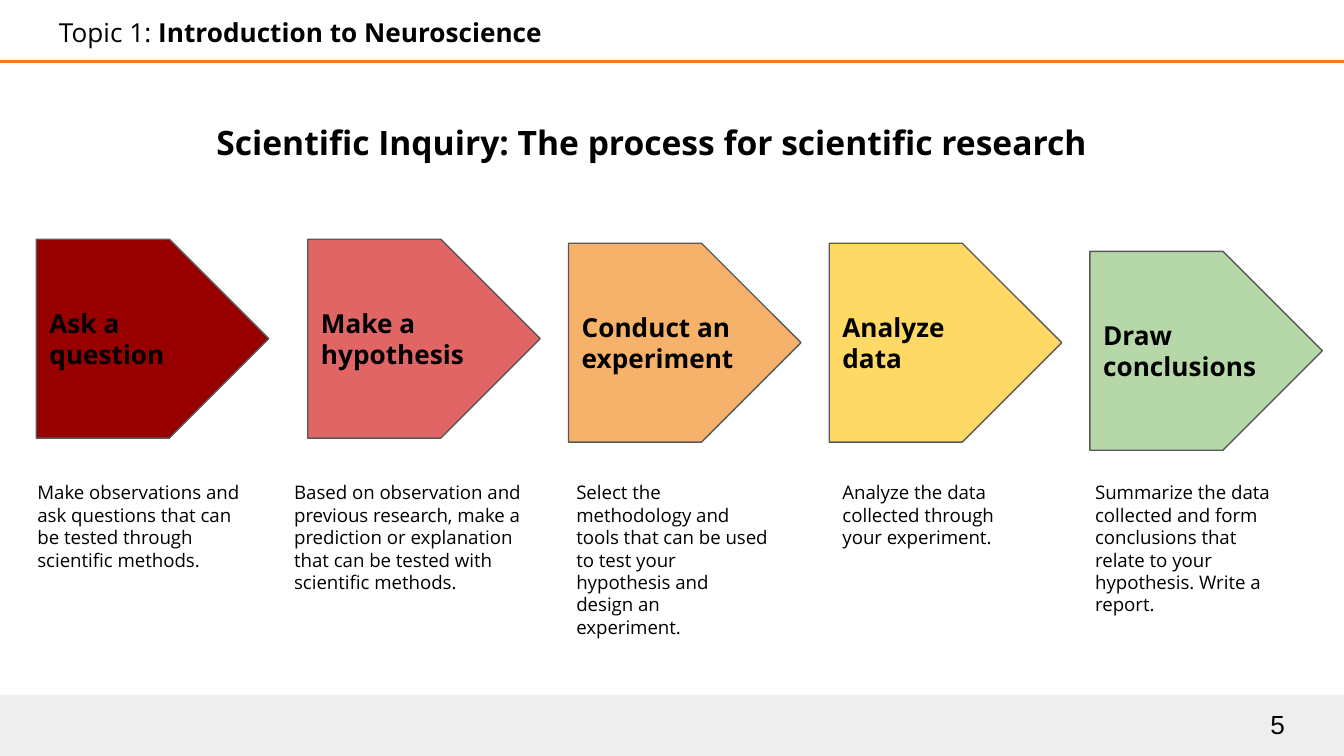
from pptx import Presentation
from pptx.dml.color import RGBColor
from pptx.enum.shapes import MSO_CONNECTOR, MSO_SHAPE
from pptx.enum.text import MSO_ANCHOR, MSO_AUTO_SIZE, PP_ALIGN
from pptx.oxml.ns import qn
from pptx.util import Inches, Pt
from lxml import etree

LEFT, CENTER, RIGHT = PP_ALIGN.LEFT, PP_ALIGN.CENTER, PP_ALIGN.RIGHT
TOP, MIDDLE = MSO_ANCHOR.TOP, MSO_ANCHOR.MIDDLE
RECTANGLE, PENTAGON = MSO_SHAPE.RECTANGLE, MSO_SHAPE.PENTAGON
STRAIGHT = MSO_CONNECTOR.STRAIGHT
NO_AUTOFIT = MSO_AUTO_SIZE.NONE

BLACK = RGBColor(0x00, 0x00, 0x00)
ORANGE = RGBColor(0xF4, 0x77, 0x21)
FOOTER_GRAY = RGBColor(0xEE, 0xEE, 0xEE)
OUTLINE_GRAY = RGBColor(0x59, 0x59, 0x59)
DARK_RED = RGBColor(0x98, 0x00, 0x00)
RED = RGBColor(0xE0, 0x66, 0x66)
PEACH = RGBColor(0xF6, 0xB2, 0x6B)
YELLOW = RGBColor(0xFF, 0xD9, 0x66)
GREEN = RGBColor(0xB6, 0xD7, 0xA8)

SLIDE_W = 10
SLIDE_H = SLIDE_W * 9 / 16
FOOTER_TOP = 5.17
ARROW_W, ARROW_H = 1.73, 1.48
NOTE_TOP = 3.48

# label, fill, arrow left and top, note, note left, width and height
STEPS = [
    ("Ask a question", DARK_RED, 0.27, 1.78,
     "Make observations and ask questions that can be tested through "
     "scientific methods.", 0.18, 1.78, 0.93),
    ("Make a hypothesis", RED, 2.29, 1.78,
     "Based on observation and previous research, make a prediction or "
     "explanation that can be tested with scientific methods.",
     2.09, 2.01, 0.93),
    ("Conduct an experiment", PEACH, 4.23, 1.81,
     "Select the methodology and tools that can be used to test your "
     "hypothesis and design an experiment.", 4.19, 1.63, 1.16),
    ("Analyze data", YELLOW, 6.17, 1.81,
     "Analyze the data collected through your experiment.",
     6.17, 1.58, 0.93),
    ("Draw conclusions", GREEN, 8.11, 1.87,
     "Summarize the data collected and form conclusions that relate to your "
     "hypothesis. Write a report.", 8.05, 1.58, 1.21),
]


def write_text(s, *texts, size=14, font="Open Sans", bold=False, align=LEFT,
               anchor=TOP):
    """Write one paragraph; a (text, bold) pair overrides the weight."""
    tf = s.text_frame
    tf.word_wrap = True
    tf.auto_size = NO_AUTOFIT
    tf.vertical_anchor = anchor
    tf.margin_left = tf.margin_right = Inches(0.1)
    tf.margin_top = tf.margin_bottom = Inches(0.1)
    p = tf.paragraphs[0]
    p.alignment = align
    for item in texts:
        text, weight = (item, bold) if isinstance(item, str) else item
        r = p.add_run()
        r.text = text
        r.font.name = font
        r.font.size = Pt(size)
        r.font.bold = weight
        r.font.color.rgb = BLACK


def add_text(slide, x, y, w, h, *texts, **fmt):
    s = slide.shapes.add_textbox(Inches(x), Inches(y), Inches(w), Inches(h))
    write_text(s, *texts, **fmt)


def add_block(slide, kind, x, y, w, h, fill, outline=None):
    s = slide.shapes.add_shape(kind, Inches(x), Inches(y), Inches(w), Inches(h))
    s.shadow.inherit = False
    s.fill.solid()
    s.fill.fore_color.rgb = fill
    if outline is None:
        s.line.fill.background()
    else:
        s.line.color.rgb = outline
        s.line.width = Pt(0.75)
    return s


def add_rule(slide, y):
    line = slide.shapes.add_connector(STRAIGHT, 0, Inches(y),
                                      Inches(SLIDE_W), Inches(y))
    line.line.color.rgb = ORANGE
    line.line.width = Pt(1.5)
    etree.SubElement(line._element.spPr, qn("a:effectLst"))


def set_title(slide, x, y, w, h, text):
    s = slide.shapes.title
    s.left, s.top, s.width, s.height = map(Inches, (x, y, w, h))
    write_text(s, text, size=18, bold=True, align=CENTER)


def add_step(slide, label, fill, x, y, note, note_x, note_w, note_h):
    s = add_block(slide, PENTAGON, x, y, ARROW_W, ARROW_H, fill, OUTLINE_GRAY)
    write_text(s, label, bold=True, anchor=MIDDLE)
    add_text(slide, note_x, NOTE_TOP, note_w, note_h, note, size=10)


def main():
    prs = Presentation()
    prs.slide_width, prs.slide_height = Inches(SLIDE_W), Inches(SLIDE_H)
    slide = prs.slides.add_slide(prs.slide_layouts[5])

    # Header and footer
    add_block(slide, RECTANGLE, 0, FOOTER_TOP, SLIDE_W, SLIDE_H - FOOTER_TOP,
              FOOTER_GRAY)
    add_text(slide, 0.34, 0.02, 4.35, 0.25,
             "Topic 1: ", ("Introduction to Neuroscience", True))
    add_rule(slide, 0.46)
    add_text(slide, 9.06, FOOTER_TOP, 0.6, 0.43, "5",
             font="Arial", align=RIGHT, anchor=MIDDLE)

    # Title
    set_title(slide, 0.57, 0.81, 8.56, 0.43,
              "Scientific Inquiry: The process for scientific research")

    # Process steps with their notes
    for step in STEPS:
        add_step(slide, *step)

    prs.save("out.pptx")


if __name__ == "__main__":
    main()
